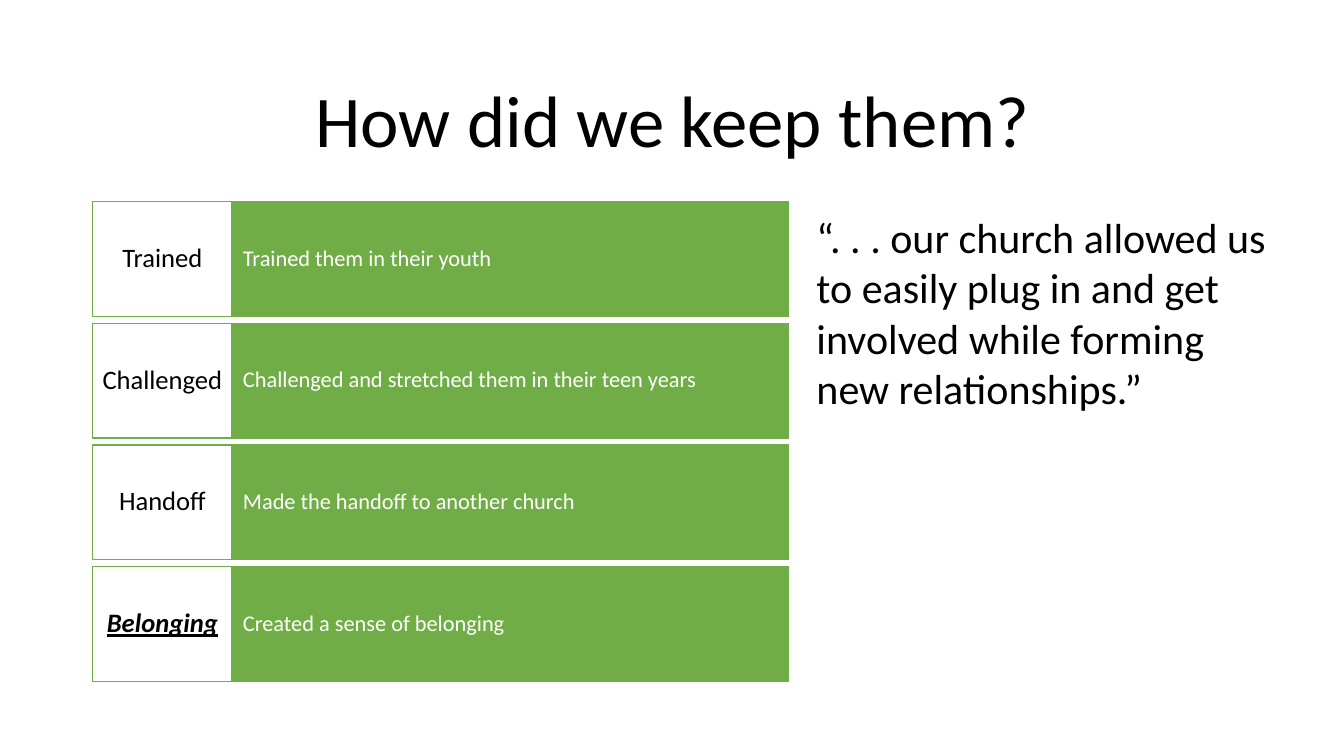
from dataclasses import dataclass

from pptx import Presentation
from pptx.dml.color import RGBColor
from pptx.enum.shapes import MSO_SHAPE
from pptx.enum.text import MSO_ANCHOR, MSO_AUTO_SIZE, PP_ALIGN
from pptx.util import Inches, Pt


@dataclass(frozen=True)
class Theme:
    """Colours, font and type sizes."""
    font: str = "Calibri"
    green: RGBColor = RGBColor(0x70, 0xAD, 0x47)
    white: RGBColor = RGBColor(0xFF, 0xFF, 0xFF)
    black: RGBColor = RGBColor(0, 0, 0)
    title: int = 52
    quote: int = 30
    label: int = 19
    note: int = 16


class Deck:
    """Style, grid and current slide."""

    left, top, col, row, pitch = 0.92, 2, 1.38, 1.14, 1.207

    def __init__(self, theme):
        """Open a deck with one title slide."""
        self.theme = theme
        self.deck = Presentation()
        self.deck.slide_width = Inches(13.33)
        self.deck.slide_height = Inches(7.5)
        self.slide = self.deck.slides.add_slide(self.deck.slide_layouts[5])

    def style(self, frame, text, size, color, align=PP_ALIGN.LEFT, space=0.9):
        """Fill a frame with one styled line of text."""
        frame.text = text
        frame.word_wrap = True
        line = frame.paragraphs[0]
        line.alignment, line.line_spacing = align, space
        font = line.runs[0].font
        font.name, font.size, font.color.rgb = self.theme.font, Pt(size), color
        return font

    def title(self, text):
        """Set the slide title."""
        shape = self.slide.shapes.title
        shape.left, shape.top = Inches(self.left), Inches(0.61)
        shape.width, shape.height = Inches(11.5), Inches(1.24)
        frame = shape.text_frame
        frame.auto_size = MSO_AUTO_SIZE.NONE
        frame.vertical_anchor = MSO_ANCHOR.MIDDLE
        self.style(frame, text, self.theme.title, self.theme.black, PP_ALIGN.CENTER)

    def cell(self, row, col, span, text, size, fill, color, align, pad):
        """Draw a box on the grid and return its font."""
        shape = self.slide.shapes.add_shape(
            MSO_SHAPE.RECTANGLE,
            Inches(self.left + col * self.col), Inches(self.top + row * self.pitch),
            Inches(span * self.col), Inches(self.row))
        shape.shadow.inherit = False
        shape.fill.solid()
        shape.fill.fore_color.rgb = fill
        shape.line.color.rgb = self.theme.green
        shape.line.width = Pt(1)
        frame = shape.text_frame
        frame.margin_left = frame.margin_right = Inches(pad)
        frame.vertical_anchor = MSO_ANCHOR.MIDDLE
        return self.style(frame, text, size, color, align)

    def step(self, row, label, note, strong=False):
        """Draw one row: a note and its label."""
        look = self.theme
        self.cell(row, 1, 4, note, look.note, look.green, look.white, PP_ALIGN.LEFT, 0.11)
        font = self.cell(row, 0, 1, label, look.label, look.white, look.black,
                         PP_ALIGN.CENTER, 0.07)
        if strong:
            font.bold = font.italic = font.underline = True

    def quote(self, text):
        """Add the quote beside the rows."""
        box = self.slide.shapes.add_textbox(Inches(8), Inches(2.05), Inches(4.76), Inches(2.12))
        self.style(box.text_frame, text, self.theme.quote, self.theme.black, space=1.0)
        box.text_frame.auto_size = MSO_AUTO_SIZE.SHAPE_TO_FIT_TEXT


STEPS = [
    ("Trained", "Trained them in their youth"),
    ("Challenged", "Challenged and stretched them in their teen years"),
    ("Handoff", "Made the handoff to another church"),
    ("Belonging", "Created a sense of belonging"),
]


def main():
    """Build and save the slide."""
    show = Deck(Theme())
    show.title("How did we keep them?")
    for row, (label, note) in enumerate(STEPS):
        show.step(row, label, note, strong=label == "Belonging")
    show.quote("“. . . our church allowed us to easily plug in and get involved "
               "while forming new relationships.”")
    show.deck.save("out.pptx")


if __name__ == "__main__":
    main()
